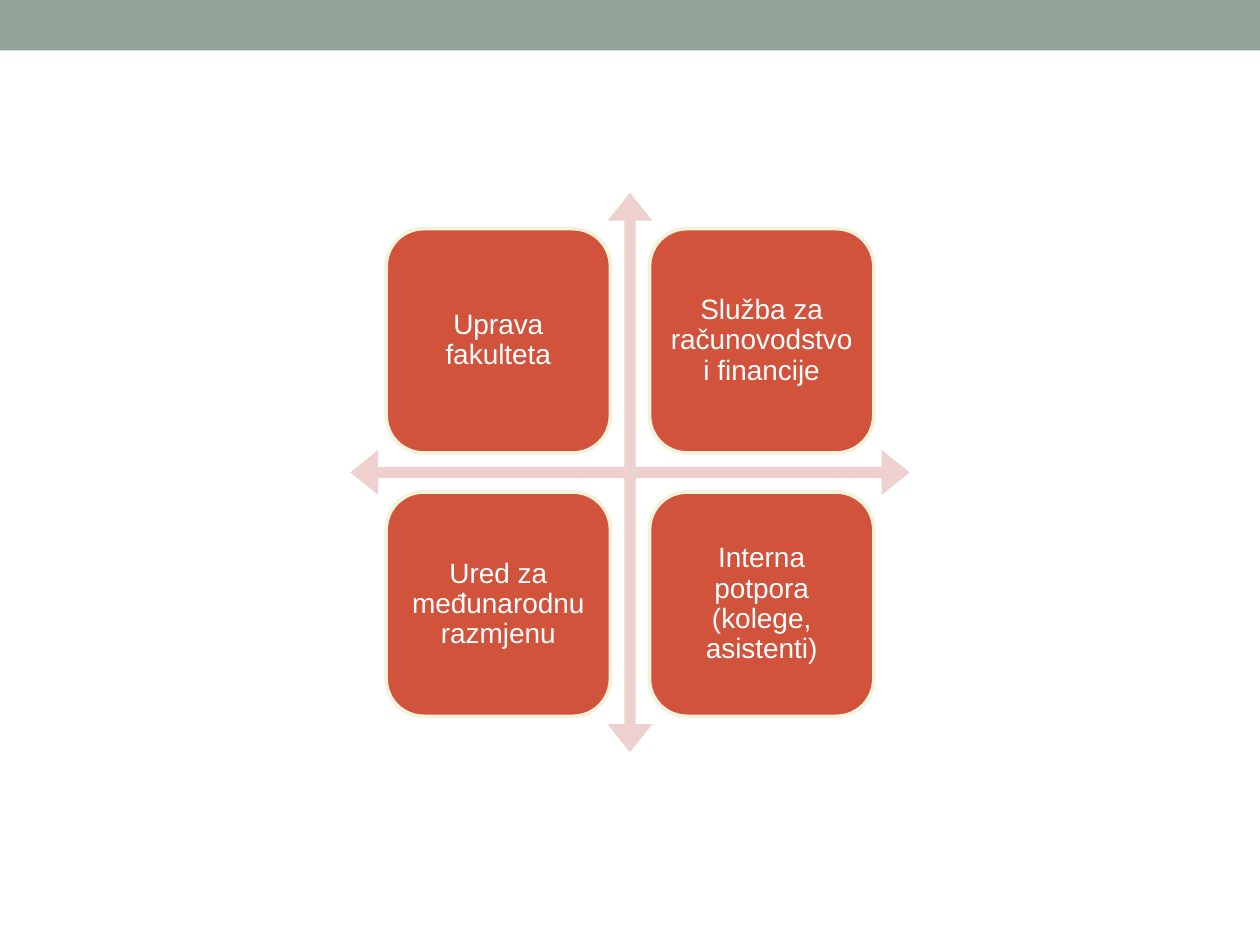
from pptx import Presentation
from pptx.dml.color import RGBColor
from pptx.enum import shapes, text
from pptx.util import Inches, Pt

# Content, row by row
SUPPORT = [
    ["Uprava fakulteta", "Služba za računovodstvo i financije"],
    ["Ured za međunarodnu razmjenu", "Interna potpora (kolege, asistenti)"],
]
COLORS = {"band": "93A299", "arrows": "EED1CE", "card": "D2533C",
          "border": "F3F2DC", "text": "FFFFFF"}

# Geometry in inches
SLIDE_W, SLIDE_H = 10, 7.5
BAND_H = 0.4
CROSS = 4.44
CENTER_X, CENTER_Y = SLIDE_W / 2, SLIDE_H / 2
CARD, PITCH = 1.78, 2.09
INSET = 0.07


def add_block(slide, kind, left, top, width, height, fill, border=None):
    block = slide.shapes.add_shape(
        kind, Inches(left), Inches(top), Inches(width), Inches(height))
    block.shadow.inherit = False
    block.fill.solid()
    block.fill.fore_color.rgb = RGBColor.from_string(COLORS[fill])
    if border:
        block.line.color.rgb = RGBColor.from_string(COLORS[border])
        block.line.width = Pt(2.08)
    else:
        block.line.fill.background()
    return block


def write(block, wording, size=16, font="Arial", color="text", spacing=0.9):
    frame = block.text_frame
    frame.word_wrap = True
    frame.vertical_anchor = text.MSO_ANCHOR.MIDDLE
    frame.margin_left = frame.margin_right = Inches(INSET)
    frame.margin_top = frame.margin_bottom = Inches(INSET)
    paragraph = frame.paragraphs[0]
    paragraph.alignment = text.PP_ALIGN.CENTER
    paragraph.line_spacing = spacing
    run = paragraph.add_run()
    run.text = wording
    run.font.size = Pt(size)
    run.font.name = font
    run.font.color.rgb = RGBColor.from_string(COLORS[color])


def main():
    deck = Presentation()
    deck.slide_width, deck.slide_height = Inches(SLIDE_W), Inches(SLIDE_H)
    slide = deck.slides.add_slide(deck.slide_layouts[6])
    kinds = shapes.MSO_SHAPE

    # Top band
    add_block(slide, kinds.RECTANGLE, 0, 0, SLIDE_W, BAND_H, "band")

    # Four-way arrow behind the cards
    arrows = add_block(slide, kinds.QUAD_ARROW, CENTER_X - CROSS / 2,
                       CENTER_Y - CROSS / 2, CROSS, CROSS, "arrows")
    for index, value in enumerate((0.02, 0.04, 0.05)):
        arrows.adjustments[index] = value

    # Cards, one in each quadrant
    first_left = CENTER_X - (PITCH + CARD) / 2
    first_top = CENTER_Y - (PITCH + CARD) / 2
    for row, offices in enumerate(SUPPORT):
        for column, office in enumerate(offices):
            card = add_block(slide, kinds.ROUNDED_RECTANGLE,
                             first_left + column * PITCH,
                             first_top + row * PITCH,
                             CARD, CARD, "card", border="border")
            write(card, office)

    deck.save("out.pptx")


if __name__ == "__main__":
    main()
